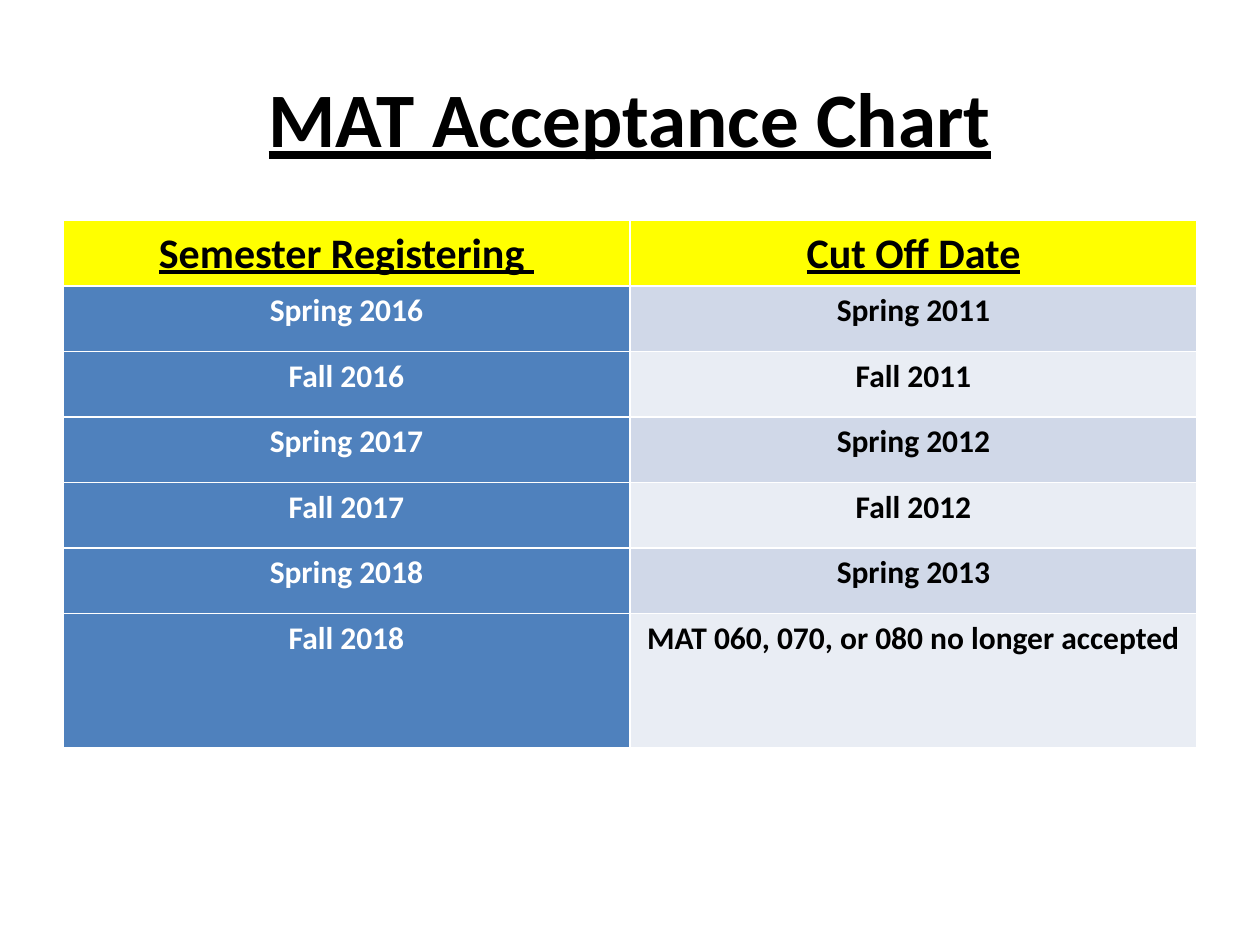
"""Build the MAT acceptance slide with its title and cut-off table."""
from dataclasses import dataclass

from pptx import Presentation
from pptx import util as u
from pptx.dml import color
from pptx.enum import text


@dataclass
class Look:
    size: int
    ink: str
    line: bool = False


@dataclass
class Term:
    start: str
    cut: str
    tall: float = 0.52


HEAD = Look(24, "000000", True)
LEFT = Look(18, "FFFFFF")
RIGHT = Look(18, "000000")
BANDS = ("D0D8E8", "E9EDF4")
TERMS = [
    Term("Spring 2016", "Spring 2011"),
    Term("Fall 2016", "Fall 2011"),
    Term("Spring 2017", "Spring 2012"),
    Term("Fall 2017", "Fall 2012"),
    Term("Spring 2018", "Spring 2013"),
    Term("Fall 2018", "MAT 060, 070, or 080 no longer accepted", 1.07),
]


def tint(code: str) -> color.RGBColor:
    return color.RGBColor.from_string(code)


def write(frame, words: str, look: Look) -> None:
    frame.text = words
    para = frame.paragraphs[0]
    para.alignment = text.PP_ALIGN.CENTER
    font = para.runs[0].font
    font.name, font.size = "Calibri", u.Pt(look.size)
    font.bold, font.underline = True, look.line
    font.color.rgb = tint(look.ink)


def add_title(slide, words: str) -> None:
    box = slide.shapes.add_textbox(u.Inches(0.5), u.Inches(0.3), u.Inches(9), u.Inches(1.25))
    frame = box.text_frame
    frame.word_wrap = True
    frame.vertical_anchor = text.MSO_ANCHOR.MIDDLE
    write(frame, words, Look(44, "000000", True))


def fill_cell(cell, words: str, look: Look, back: str) -> None:
    cell.margin_top = cell.margin_bottom = 0
    cell.fill.solid()
    cell.fill.fore_color.rgb = tint(back)
    write(cell.text_frame, words, look)
    cell.text_frame.paragraphs[0].line_spacing = 1.15


def add_terms(slide, head: Term, terms: list[Term]) -> None:
    rows = [head, *terms]
    high = sum(row.tall for row in rows)
    grid = slide.shapes.add_table(
        len(rows), 2, u.Inches(0.5), u.Inches(1.75), u.Inches(9), u.Inches(high)
    ).table
    grid.first_col = True
    for i, row in enumerate(rows):
        grid.rows[i].height = u.Inches(row.tall)
        if i == 0:
            looks, backs = (HEAD, HEAD), ("FFFF00", "FFFF00")
        else:
            looks, backs = (LEFT, RIGHT), ("4F81BD", BANDS[(i - 1) % 2])
        for j, words in enumerate((row.start, row.cut)):
            fill_cell(grid.cell(i, j), words, looks[j], backs[j])


def main() -> None:
    deck = Presentation()
    deck.slide_width, deck.slide_height = u.Inches(10), u.Inches(7.5)
    slide = deck.slides.add_slide(deck.slide_layouts[6])
    add_title(slide, "MAT Acceptance Chart")
    add_terms(slide, Term("Semester Registering ", "Cut Off Date"), TERMS)
    deck.save("out.pptx")


if __name__ == "__main__":
    main()
